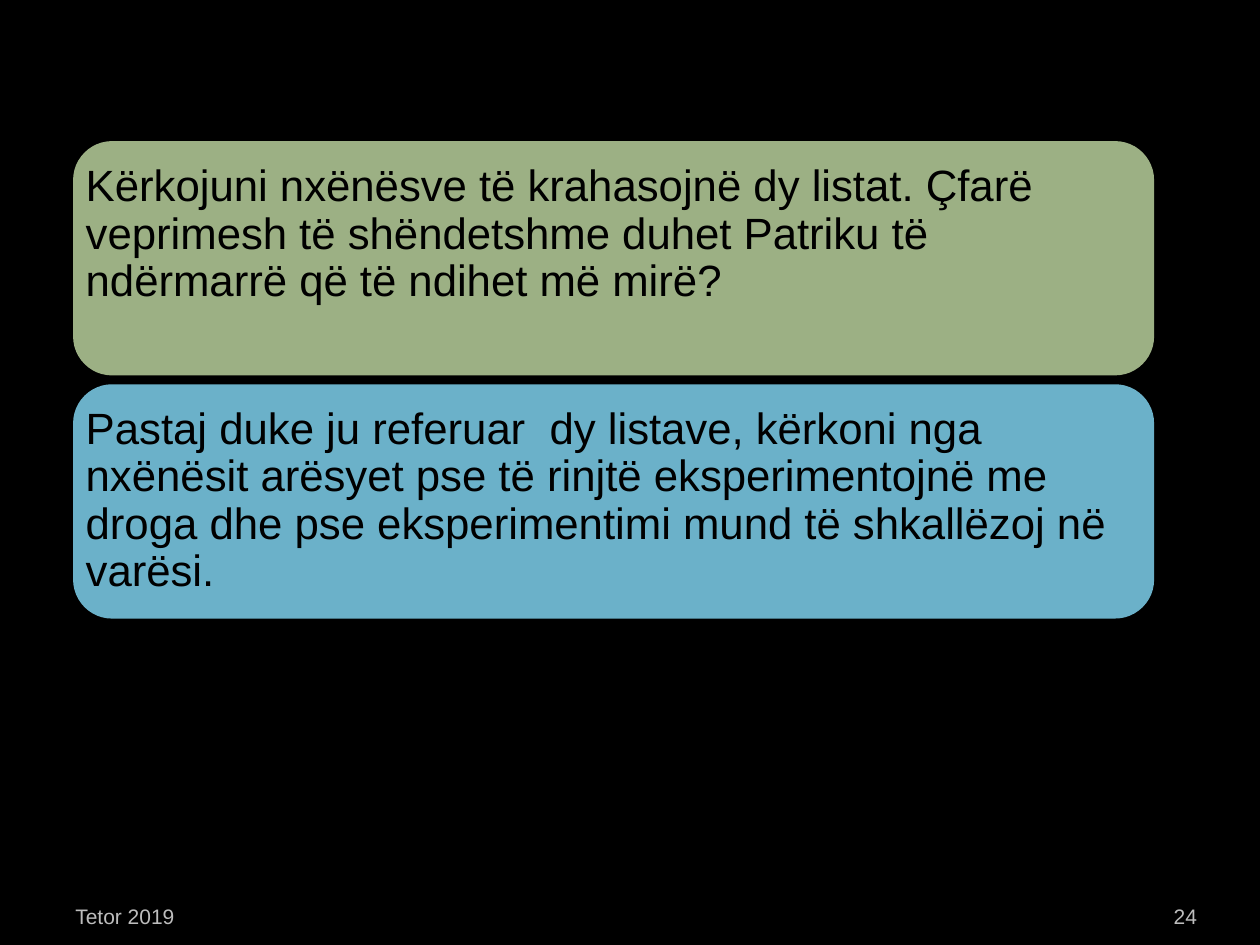
import pptx
import pptx.util
from lxml import etree
from pptx.dml.color import RGBColor
from pptx.enum.shapes import MSO_SHAPE
from pptx.enum.text import MSO_ANCHOR, PP_ALIGN
from pptx.oxml.ns import qn
from pptx.util import Inches

BLACK = RGBColor(0x00, 0x00, 0x00)
GREY = RGBColor(0xBD, 0xBD, 0xBD)
GREEN = RGBColor(0x9C, 0xB0, 0x84)
BLUE = RGBColor(0x6B, 0xB1, 0xC9)

CARD_LEFT, CARD_TOP = 0.58, 1.12
CARD_WIDTH, CARD_HEIGHT, CARD_PITCH = 8.58, 1.86, 1.93

# Fill, room left free below the text, wording
CARDS = [
    (GREEN, 0.38, "Kërkojuni nxënësve të krahasojnë dy listat. Çfarë veprimesh të "
                  "shëndetshme duhet Patriku të ndërmarrë që të ndihet më mirë?"),
    (BLUE, 0.01, "Pastaj duke ju referuar  dy listave, kërkoni nga nxënësit arësyet "
                 "pse të rinjtë eksperimentojnë me droga dhe pse eksperimentimi mund "
                 "të shkallëzoj në varësi."),
]


class SlideBuilder:
    font_name = "Arial"

    def __init__(self, slide, background):
        self.slide = slide
        slide.background.fill.solid()
        slide.background.fill.fore_color.rgb = background

    def set_text(self, shape, text, size, color, align, anchor, insets):
        """Set one styled paragraph; insets are left, top, right, bottom in inches."""
        frame = shape.text_frame
        frame.word_wrap = True
        frame.vertical_anchor = anchor
        (frame.margin_left, frame.margin_top,
         frame.margin_right, frame.margin_bottom) = map(Inches, insets)
        para = frame.paragraphs[0]
        para.text = text
        para.alignment = align
        font = para.runs[0].font
        font.name = self.font_name
        font.size = pptx.util.Pt(size)
        font.color.rgb = color
        return para

    def footer(self, text, left, width, align, side_inset):
        box = self.slide.shapes.add_textbox(
            Inches(left), Inches(7.02), Inches(width), Inches(0.4))
        self.set_text(box, text, 12, GREY, align, MSO_ANCHOR.BOTTOM,
                      (side_inset, 0.05, side_inset, 0.05))

    def card(self, text, top, fill, bottom_inset):
        card = self.slide.shapes.add_shape(
            MSO_SHAPE.ROUNDED_RECTANGLE, Inches(CARD_LEFT), Inches(top),
            Inches(CARD_WIDTH), Inches(CARD_HEIGHT))
        card.fill.solid()
        card.fill.fore_color.rgb = fill
        card.line.fill.background()
        self.inner_shadow(card)
        para = self.set_text(card, text, 25, BLACK, PP_ALIGN.LEFT, MSO_ANCHOR.MIDDLE,
                             (0.01, 0.01, 0.01, bottom_inset))
        para.line_spacing = 0.9

    def inner_shadow(self, shape):
        shape.shadow.inherit = False
        effects = shape._element.spPr.find(qn("a:effectLst"))
        shadow = etree.SubElement(effects, qn("a:innerShdw"),
                                  blurRad=str(pptx.util.Pt(7.5)), dist="0", dir="0")
        color = etree.SubElement(shadow, qn("a:srgbClr"), val=str(BLACK))
        etree.SubElement(color, qn("a:alpha"), val="50000")


def main():
    deck = pptx.Presentation()
    deck.slide_width, deck.slide_height = Inches(10), Inches(7.5)
    builder = SlideBuilder(deck.slides.add_slide(deck.slide_layouts[6]), BLACK)
    builder.footer("Tetor 2019", 0.5, 2.33, PP_ALIGN.LEFT, 0.1)
    builder.footer("24", 8.67, 0.83, PP_ALIGN.RIGHT, 0)
    for index, (fill, bottom_inset, text) in enumerate(CARDS):
        builder.card(text, CARD_TOP + index * CARD_PITCH, fill, bottom_inset)
    deck.save("out.pptx")


if __name__ == "__main__":
    main()
